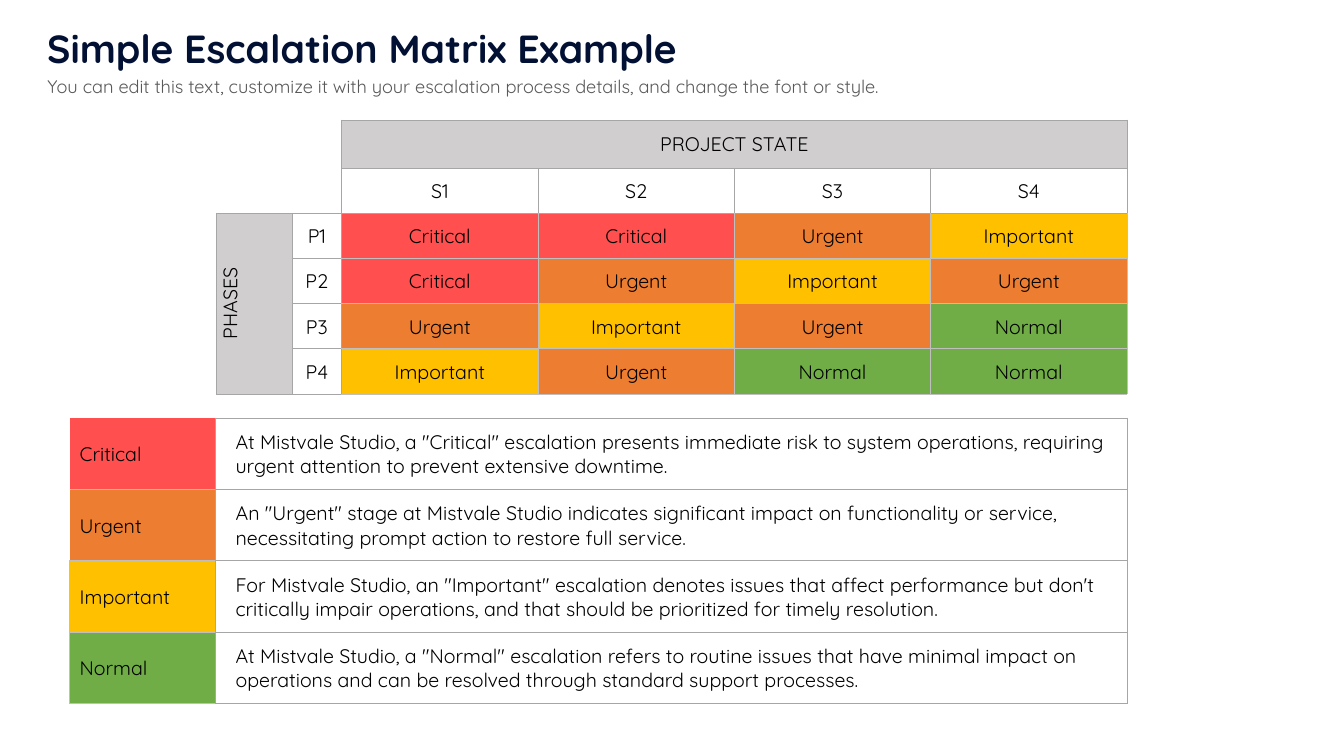
from dataclasses import dataclass

from lxml import etree
from pptx import Presentation
from pptx.dml.color import RGBColor
from pptx.enum.text import MSO_ANCHOR, MSO_AUTO_SIZE, PP_ALIGN
from pptx.oxml.ns import qn
from pptx.util import Inches, Pt

SLIDE_WIDTH, SLIDE_HEIGHT = Inches(13.33), Inches(7.5)
BLANK_LAYOUT = 6
MIDDLE = MSO_ANCHOR.MIDDLE
CENTER, LEFT = PP_ALIGN.CENTER, PP_ALIGN.LEFT
FIT_SHAPE = MSO_AUTO_SIZE.SHAPE_TO_FIT_TEXT
FONT = "Quicksand"

BLACK, WHITE, HEADER = "000000", "FFFFFF", "D0CECE"
GRID_LINE, LEVEL_LINE = "A6A6A6", "BFBFBF"
SIDES = "LRTB"
MATRIX_INSETS = (0.01, 0.01, 0.01, 0)
LABEL_INSETS = (0.1, 0.01, 0.01, 0)
MEANING_INSETS = (0.2, 0.01, 0.1, 0)


@dataclass(frozen=True)
class Level:
    name: str
    color: str
    meaning: str


@dataclass(frozen=True)
class Heading:
    """A line of text; its box is in percent of the slide."""
    text: str
    box: tuple[float, float, float, float]
    size: int
    color: str
    bold: bool


@dataclass(frozen=True)
class CellStyle:
    """Fill colour, border colour per side, insets in inches and alignment."""
    fill: str | None
    borders: dict[str, str]
    insets: tuple[float, float, float, float]
    align: PP_ALIGN


HEADINGS = [
    Heading("Simple Escalation Matrix Example",
            (2.78, 2.53, 56.49, 7.6), 28, "011033", True),
    Heading("You can edit this text, customize it with your escalation process "
            "details, and change the font or style.",
            (2.78, 9.33, 68.49, 4.27), 13, "595959", False),
]
LEVELS = [
    Level("Critical", "FF4F4F",
          'At Mistvale Studio, a "Critical" escalation presents immediate risk to system '
          "operations, requiring urgent attention to prevent extensive downtime."),
    Level("Urgent", "ED7D31",
          'An "Urgent" stage at Mistvale Studio indicates significant impact on functionality '
          "or service, necessitating prompt action to restore full service."),
    Level("Important", "FFC000",
          'For Mistvale Studio, an "Important" escalation denotes issues that affect performance '
          "but don't critically impair operations, and that should be prioritized for timely "
          "resolution."),
    Level("Normal", "70AD47",
          'At Mistvale Studio, a "Normal" escalation refers to routine issues that have minimal '
          "impact on operations and can be resolved through standard support processes."),
]
LEVEL_COLORS = {level.name: level.color for level in LEVELS}
MATRIX = [
    ["", "", "PROJECT STATE", "", "", ""],
    ["", "", "S1", "S2", "S3", "S4"],
    ["PHASES", "P1", "Critical", "Critical", "Urgent", "Important"],
    ["", "P2", "Critical", "Urgent", "Important", "Urgent"],
    ["", "P3", "Urgent", "Important", "Urgent", "Normal"],
    ["", "P4", "Important", "Urgent", "Normal", "Normal"],
]


def across(percent: float) -> int:
    return round(SLIDE_WIDTH * percent / 100)


def down(percent: float) -> int:
    return round(SLIDE_HEIGHT * percent / 100)


def rgb(color: str) -> RGBColor:
    return RGBColor.from_string(color)


def set_font(para, size: int, color: str, bold: bool = False) -> None:
    font = para.font
    font.name, font.size, font.bold = FONT, Pt(size), bold
    font.color.rgb = rgb(color)


def add_heading(slide, heading: Heading) -> None:
    left, top, width, height = heading.box
    box = slide.shapes.add_textbox(across(left), down(top), across(width), down(height))
    frame = box.text_frame
    frame.word_wrap = True
    frame.auto_size = FIT_SHAPE
    frame.text = heading.text
    set_font(frame.paragraphs[0], heading.size, heading.color, heading.bold)


def set_borders(cell, borders: dict[str, str]) -> None:
    """Draw the given sides and hide the others."""
    properties = cell._tc.get_or_add_tcPr()
    for index, side in enumerate(SIDES):
        line = etree.Element(qn(f"a:ln{side}"), w=str(Pt(0.5)))
        if side in borders:
            fill = etree.SubElement(line, qn("a:solidFill"))
            etree.SubElement(fill, qn("a:srgbClr"), val=borders[side])
        else:
            etree.SubElement(line, qn("a:noFill"))
        properties.insert(index, line)


def fill_cell(cell, text: str, style: CellStyle) -> None:
    cell.text = text
    cell.vertical_anchor = MIDDLE
    (cell.margin_left, cell.margin_top,
     cell.margin_right, cell.margin_bottom) = map(Inches, style.insets)
    para = cell.text_frame.paragraphs[0]
    para.alignment = style.align
    set_font(para, 14, BLACK)
    if style.fill:
        cell.fill.solid()
        cell.fill.fore_color.rgb = rgb(style.fill)
    else:
        cell.fill.background()
    set_borders(cell, style.borders)


def add_grid(slide, left: float, top: float, widths: list[float], heights: list[float],
             texts: list[list[str]], style_at):
    """Add a table sized in percent of the slide; style_at(row, column) styles its cells."""
    table = slide.shapes.add_table(
        len(heights), len(widths), across(left), down(top),
        across(sum(widths)), down(sum(heights))).table
    table.first_row = table.horz_banding = False
    for column, width in zip(table.columns, widths):
        column.width = across(width)
    for row, height in zip(table.rows, heights):
        row.height = down(height)
    for row, line in enumerate(texts):
        for column, text in enumerate(line):
            fill_cell(table.cell(row, column), text, style_at(row, column))
    return table


def matrix_style(row: int, column: int) -> CellStyle:
    borders = dict.fromkeys(SIDES, GRID_LINE)
    if row < 2 and column < 2:
        fill = WHITE if row else None
        touching = {"R": column == 1, "B": row == 1}
        borders = {side: GRID_LINE for side, shown in touching.items() if shown}
    elif row == 0 or column == 0:
        fill = HEADER
    elif row == 1 or column == 1:
        fill = WHITE
    else:
        fill = LEVEL_COLORS[MATRIX[row][column]]
        borders = dict.fromkeys(SIDES, LEVEL_LINE)
        if column == 2:
            borders["L"] = GRID_LINE
        if row == 2:
            borders["T"] = GRID_LINE
    return CellStyle(fill, borders, MATRIX_INSETS, CENTER)


def legend_style(row: int, column: int) -> CellStyle:
    if column == 1:
        return CellStyle(None, dict.fromkeys(SIDES, GRID_LINE), MEANING_INSETS, LEFT)
    borders = {"R": GRID_LINE, "B": LEVEL_LINE}
    if row > 0:
        borders["T"] = LEVEL_LINE
    if row > 1:
        borders["L"] = LEVEL_LINE
    return CellStyle(LEVELS[row].color, borders, LABEL_INSETS, LEFT)


def main() -> None:
    deck = Presentation()
    deck.slide_width, deck.slide_height = SLIDE_WIDTH, SLIDE_HEIGHT
    page = deck.slides.add_slide(deck.slide_layouts[BLANK_LAYOUT])
    for heading in HEADINGS:
        add_heading(page, heading)

    matrix = add_grid(page, 16.13, 15.87, [5.6, 3.7] + [14.61] * 4,
                      [6.35] + [5.98] * 5, MATRIX, matrix_style)
    matrix.cell(0, 2).merge(matrix.cell(0, 5))
    phases = matrix.cell(2, 0)
    phases.merge(matrix.cell(5, 0))
    phases._tc.get_or_add_tcPr().set("vert", "vert270")

    add_grid(page, 5.18, 55.3, [10.85, 67.87], [9.44] * len(LEVELS),
             [[level.name, level.meaning] for level in LEVELS], legend_style)
    deck.save("out.pptx")


if __name__ == "__main__":
    main()
